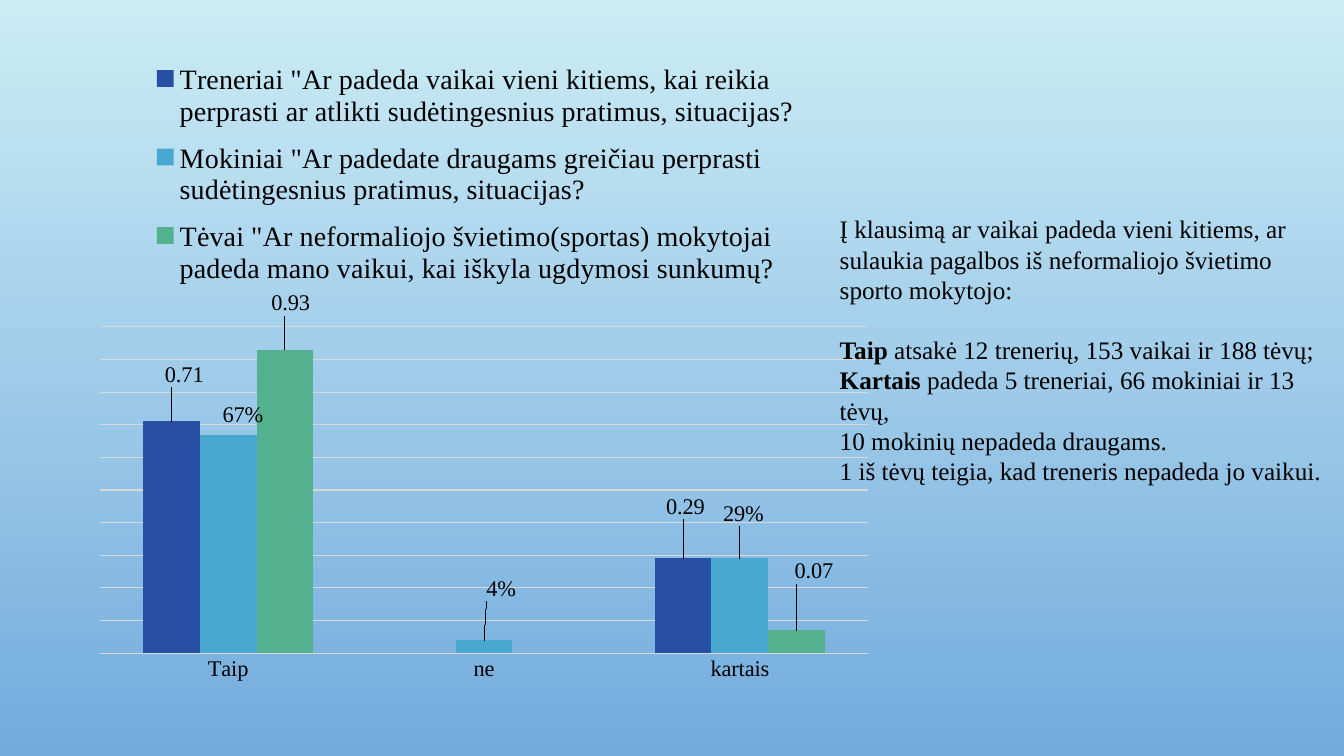
"""Build a slide comparing answers of coaches, pupils and parents on mutual help."""
from dataclasses import dataclass
from typing import Any

import lxml.etree
import pptx
import pptx.chart.data
import pptx.dml.color
import pptx.enum.chart
import pptx.enum.text
import pptx.oxml
import pptx.oxml.ns
import pptx.util

PX = 9144
FACE = "Times New Roman"
BLACK = "000000"
CATEGORIES = ["Taip", "ne", "kartais"]


@dataclass
class Answers:
    """One group of respondents, with label shifts as fractions of the chart."""
    name: str
    color: str
    values: list[float | None]
    shifts: list[tuple[float, float] | None]
    number_format: str = "General"


@dataclass
class Line:
    """One paragraph of the commentary, opened by an optional bold word."""
    text: str
    lead: str = ""
    space_after: float = 0


GROUPS = [
    Answers('Treneriai "Ar padeda vaikai vieni kitiems, kai reikia perprasti ar atlikti '
            'sudėtingesnius pratimus, situacijas?', "274FA4", [0.71, None, 0.29],
            [(0.016, -0.045), None, (0.003, -0.053)]),
    Answers('Mokiniai "Ar padedate draugams greičiau perprasti sudėtingesnius pratimus, '
            'situacijas?', "48A8D0", [0.67, 0.04, 0.29],
            [(0.018, -0.005), (0.021, -0.052), (0.004, -0.042)], "0%"),
    Answers('Tėvai "Ar neformaliojo švietimo(sportas) mokytojai padeda mano vaikui, kai '
            'iškyla ugdymosi sunkumų?', "53B18F", [0.93, None, 0.07],
            [(0.007, -0.045), None, (0.021, -0.064)]),
]
COMMENTARY = [
    Line("Į klausimą ar vaikai padeda vieni kitiems, ar sulaukia pagalbos iš "
         "neformaliojo švietimo sporto mokytojo:", space_after=21.5),
    Line(" atsakė 12 trenerių, 153 vaikai ir 188 tėvų;", "Taip"),
    Line("padeda 5 treneriai, 66 mokiniai ir 13 tėvų,", "Kartais "),
    Line("10 mokinių nepadeda draugams."),
    Line("1 iš tėvų teigia, kad treneris nepadeda jo vaikui."),
]


def px(*lengths: int) -> list[pptx.util.Emu]:
    """Turn px lengths into EMU."""
    return [pptx.util.Emu(length * PX) for length in lengths]


def rgb(color: str) -> pptx.dml.color.RGBColor:
    """Turn a hex string into a colour."""
    return pptx.dml.color.RGBColor.from_string(color)


def apply(target: Any, formats: dict[str, Any]) -> None:
    """Set every attribute named in the dict."""
    for name, value in formats.items():
        setattr(target, name, value)


def style_font(font: Any, size: float, face: str = FACE, bold: bool = False) -> None:
    """Give a font its face, size, weight and black colour."""
    apply(font, {"name": face, "size": pptx.util.Pt(size), "bold": bold})
    font.color.rgb = rgb(BLACK)


def manual_layout(**parts: str | float) -> Any:
    """Make a manual chart layout element from its parts."""
    body = "".join(f'<c:{name} val="{value}"/>' for name, value in parts.items())
    return pptx.oxml.parse_xml(
        f'<c:layout {pptx.oxml.ns.nsdecls("c")}><c:manualLayout>{body}'
        "</c:manualLayout></c:layout>")


def paint_background(page: Any) -> None:
    """Fill the page with a vertical gradient."""
    fill = page.background.fill
    fill.gradient()
    fill.gradient_angle = 270
    for stop, color in zip(fill.gradient_stops, ["CBECF5", "73ABDD"]):
        stop.color.rgb = rgb(color)


def style_series(series: Any, group: Answers) -> None:
    """Colour the columns of a group and place their value labels."""
    series.format.fill.solid()
    series.format.fill.fore_color.rgb = rgb(group.color)
    series.invert_if_negative = False
    labels = series.data_labels
    apply(labels, {"show_value": True, "number_format": group.number_format,
                   "number_format_is_linked": False})
    style_font(labels.font, 16)
    for index, shift in enumerate(group.shifts):
        if shift is None:
            continue
        label = series.points[index].data_label
        style_font(label.font, 16)
        label.position = pptx.enum.chart.XL_LABEL_POSITION.OUTSIDE_END
        mark = series._element.xpath(f"c:dLbls/c:dLbl[c:idx/@val='{index}']")[0]
        mark.insert(1, manual_layout(x=shift[0], y=shift[1]))
        number = lxml.etree.Element(pptx.oxml.ns.qn("c:numFmt"),
                                    formatCode=group.number_format, sourceLinked="0")
        mark.insert(2, number)


def style_axes(chart: Any) -> None:
    """Show category names and gridlines, and hide the value axis."""
    no_tick = pptx.enum.chart.XL_TICK_MARK.NONE
    category, value = chart.category_axis, chart.value_axis
    apply(category, {"major_tick_mark": no_tick, "minor_tick_mark": no_tick})
    category.format.line.fill.background()
    style_font(category.tick_labels.font, 16)
    apply(value, {"visible": False, "has_major_gridlines": True, "minimum_scale": 0,
                  "maximum_scale": 1, "major_unit": 0.1})
    grid = value.major_gridlines.format.line
    grid.color.rgb = rgb("D9D9D9")
    grid.width = pptx.util.Pt(0.75)


def add_answer_chart(page: Any) -> None:
    """Add the clustered columns with their legend on top."""
    data = pptx.chart.data.CategoryChartData()
    data.categories = CATEGORIES
    for group in GROUPS:
        data.add_series(group.name, group.values, group.number_format)
    kind = pptx.enum.chart.XL_CHART_TYPE.COLUMN_CLUSTERED
    chart = page.shapes.add_chart(kind, *px(58, 29, 811, 655), data).chart
    apply(chart, {"has_title": False, "has_legend": True})
    style_font(chart.font, 10, "Cabin")
    style_axes(chart)
    plot = chart.plots[0]
    apply(plot, {"gap_width": 150, "overlap": 0, "vary_by_categories": False})
    for series, group in zip(plot.series, GROUPS):
        style_series(series, group)

    legend = chart.legend
    apply(legend, {"position": pptx.enum.chart.XL_LEGEND_POSITION.TOP,
                   "include_in_layout": False})
    style_font(legend.font, 20)
    for old in chart.element.xpath("//c:legend/c:layout | //c:plotArea/c:layout"):
        old.getparent().remove(old)
    chart.element.xpath("//c:legend/c:legendPos")[0].addnext(manual_layout(
        xMode="edge", yMode="edge", x=0.11, y=0.03, w=0.8, h=0.38))
    chart.element.xpath("//c:plotArea")[0].insert(0, manual_layout(
        layoutTarget="inner", xMode="edge", yMode="edge",
        x=0.051, y=0.451, w=0.939, h=0.494))


def add_commentary(page: Any) -> None:
    """Add the text that sums up the answers."""
    frame = page.shapes.add_textbox(*px(823, 207, 499, 313)).text_frame
    apply(frame, {"word_wrap": True,
                  "auto_size": pptx.enum.text.MSO_AUTO_SIZE.SHAPE_TO_FIT_TEXT})
    for index, line in enumerate(COMMENTARY):
        para = frame.add_paragraph() if index else frame.paragraphs[0]
        para.space_after = pptx.util.Pt(line.space_after)
        for text, bold in ((line.lead, True), (line.text, False)):
            if text:
                span = para.add_run()
                span.text = text
                style_font(span.font, 18, bold=bold)


def main() -> None:
    """Build and save the deck."""
    deck = pptx.Presentation()
    deck.slide_width, deck.slide_height = px(1333, 750)
    page = deck.slides.add_slide(deck.slide_layouts[6])
    paint_background(page)
    add_answer_chart(page)
    add_commentary(page)
    deck.save("out.pptx")


if __name__ == "__main__":
    main()
